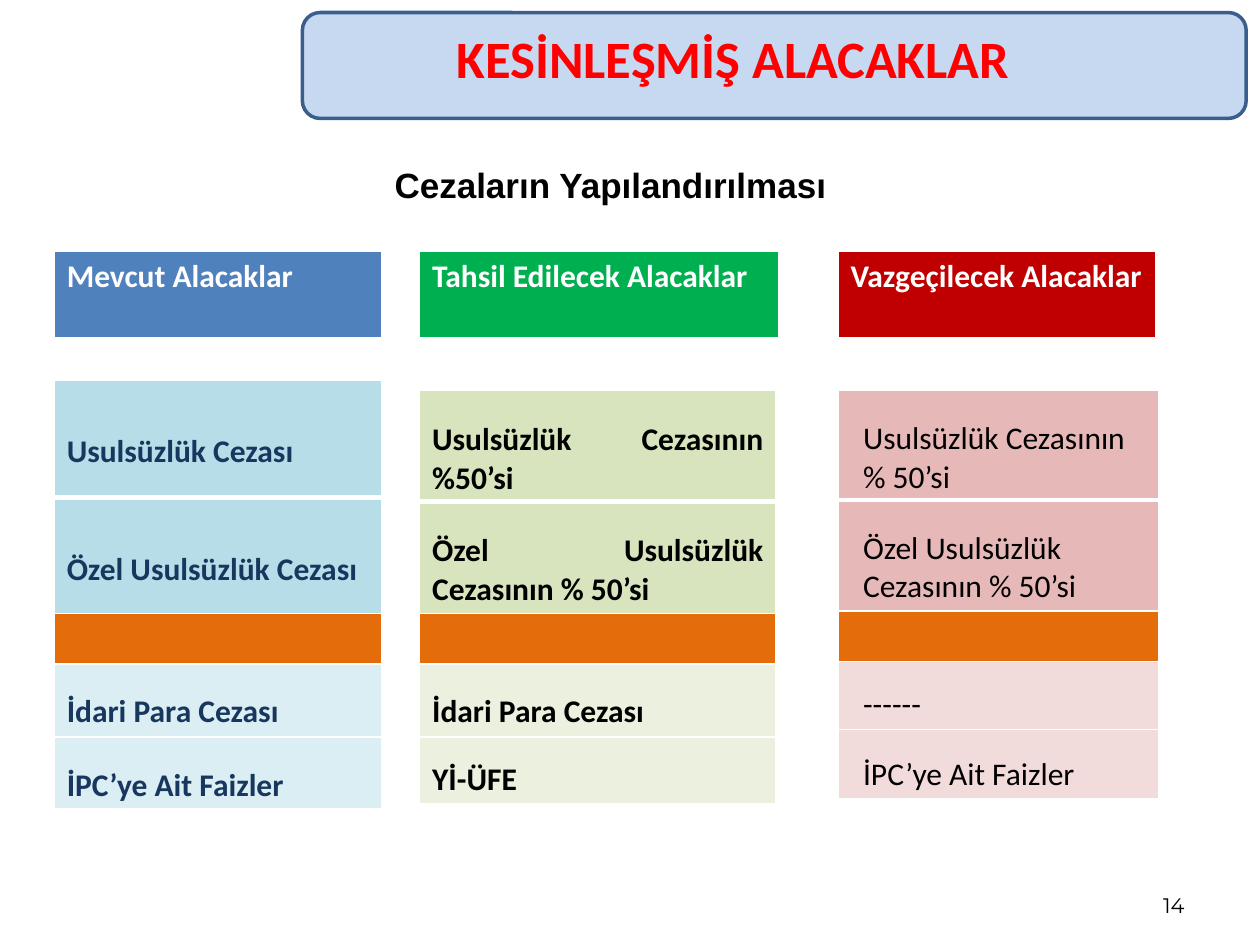
from lxml import etree
from pptx import Presentation
from pptx.dml.color import RGBColor
from pptx.enum import shapes, text
from pptx.oxml.ns import qn
from pptx.util import Inches, Pt

HUES = {
    "white": "FFFFFF", "black": "000000", "red": "FF0000", "navy": "17375E",
    "banner": "C6D9F1", "edge": "3A5F8C", "orange": "E46C0A",
    "blue": "4F81BD", "aqua": "B7DEE8", "ice": "DBEEF4",
    "green": "00B050", "lime": "D7E4BD", "mint": "EBF1DE",
    "wine": "C00000", "rose": "E6B9B8", "pink": "F2DCDB",
}
HUES = {name: RGBColor.from_string(code) for name, code in HUES.items()}
ALIGN = text.PP_ALIGN


def write(frame, words, size, hue, align=ALIGN.LEFT, bold=True, face="Calibri"):
    para = frame.paragraphs[0]
    para.alignment = align
    run = para.add_run()
    run.text = words
    look = {"size": Pt(size), "bold": bold, "name": face}
    for key, value in look.items():
        setattr(run.font, key, value)
    run.font.color.rgb = HUES[hue]


def grid(left, top, width, rows, hue, align, bold, inset):
    """Add a one-column table; each row is (words, height, top margin, fill)."""
    high = sum(row[1] for row in rows)
    table = slide.shapes.add_table(
        len(rows), 1, Inches(left), Inches(top), Inches(width), Inches(high)).table
    table.first_row = table.horz_banding = False
    for i, (words, tall, pad, fill) in enumerate(rows):
        table.rows[i].height = Inches(tall)
        cell = table.cell(i, 0)
        props = cell._tc.get_or_add_tcPr()
        for side in "LRTB":
            thick = 3 if (i, side) in ((0, "B"), (1, "T")) else 1
            line = etree.SubElement(props, qn("a:ln" + side), w=str(Pt(thick)))
            paint = etree.SubElement(line, qn("a:solidFill"))
            etree.SubElement(paint, qn("a:srgbClr"), val=str(HUES["white"]))
        cell.fill.solid()
        cell.fill.fore_color.rgb = HUES[fill]
        cell.margin_left = Inches(inset)
        cell.margin_top = Inches(pad)
        cell.margin_bottom = Inches(0.02)
        if words:
            write(cell.text_frame, words, 18, hue, align, bold)


deck = Presentation()
deck.slide_width, deck.slide_height = Inches(10), Inches(7.5)
slide = deck.slides.add_slide(deck.slide_layouts[5])

# Banner, placed behind the title
banner = slide.shapes.add_shape(
    shapes.MSO_SHAPE.ROUNDED_RECTANGLE,
    Inches(2.4), Inches(0.1), Inches(7.49), Inches(0.84))
banner.shadow.inherit = False
banner.fill.solid()
banner.fill.fore_color.rgb = HUES["banner"]
banner.line.color.rgb = HUES["edge"]
banner.line.width = Pt(2)
slide.shapes._spTree.insert(2, banner._element)

title = slide.shapes.title
place = {"left": 3.51, "top": 0.15, "width": 4.62, "height": 0.61}
for key, value in place.items():
    setattr(title, key, Inches(value))
title.text_frame.word_wrap = False
title.text_frame.vertical_anchor = text.MSO_ANCHOR.MIDDLE
write(title.text_frame, "KESİNLEŞMİŞ ALACAKLAR", 30, "red", ALIGN.CENTER)

# Columns: left, header width, header, header fill, body top, body width,
# text colour, alignment, bold, inset, strong fill, pale fill, rows
columns = [
    (0.43, 2.6, "Mevcut Alacaklar", "blue", 3.02, 2.6,
     "navy", ALIGN.LEFT, True, 0.1, "aqua", "ice",
     [("Usulsüzlük Cezası", 0.93, 0.41),
      ("Özel Usulsüzlük Cezası", 0.92, 0.42),
      ("", 0.4, 0.05),
      ("İdari Para Cezası", 0.58, 0.23),
      ("İPC’ye Ait Faizler", 0.57, 0.23)]),
    (3.33, 2.85, "Tahsil Edilecek Alacaklar", "green", 3.1, 2.83,
     "black", ALIGN.JUSTIFY, True, 0.1, "lime", "mint",
     [("Usulsüzlük Cezasının %50’si", 0.88, 0.24),
      ("Özel Usulsüzlük Cezasının % 50’si", 0.89, 0.24),
      ("", 0.4, 0.05),
      ("İdari Para Cezası", 0.58, 0.23),
      ("Yİ-ÜFE", 0.53, 0.19)]),
    (6.65, 2.52, "Vazgeçilecek Alacaklar", "wine", 3.1, 2.55,
     "black", ALIGN.LEFT, False, 0.2, "rose", "pink",
     [("Usulsüzlük Cezasının % 50’si", 0.87, 0.23),
      ("Özel Usulsüzlük Cezasının % 50’si", 0.88, 0.23),
      ("", 0.4, 0.05),
      ("------", 0.54, 0.19),
      ("İPC’ye Ait Faizler", 0.55, 0.21)]),
]
for (left, wide, head, tint, top, width, hue, align, bold, inset,
     strong, pale, rows) in columns:
    fills = [strong, strong, "orange", pale, pale]
    body = [(*row, fill) for row, fill in zip(rows, fills)]
    grid(left, top, width, body, hue, align, bold, inset)
    grid(left, 1.99, wide, [(head, 0.7, 0.05, tint)],
         "white", ALIGN.LEFT, True, 0.1)

# Subtitle and page number
notes = [
    ((0.83, 1.25, 7.95, 0.44), "Cezaların Yapılandırılması", 20,
     ALIGN.CENTER, True, "Arial", text.MSO_ANCHOR.TOP, 0.18),
    ((7.17, 6.83, 2.33, 0.5), "14", 12,
     ALIGN.RIGHT, False, "Montserrat", text.MSO_ANCHOR.BOTTOM, 0.1),
]
for spot, words, size, align, bold, face, anchor, inset in notes:
    frame = slide.shapes.add_textbox(*map(Inches, spot)).text_frame
    frame.word_wrap = True
    frame.vertical_anchor = anchor
    frame.margin_left = Inches(inset)
    write(frame, words, size, "black", align, bold, face)

deck.save("out.pptx")
